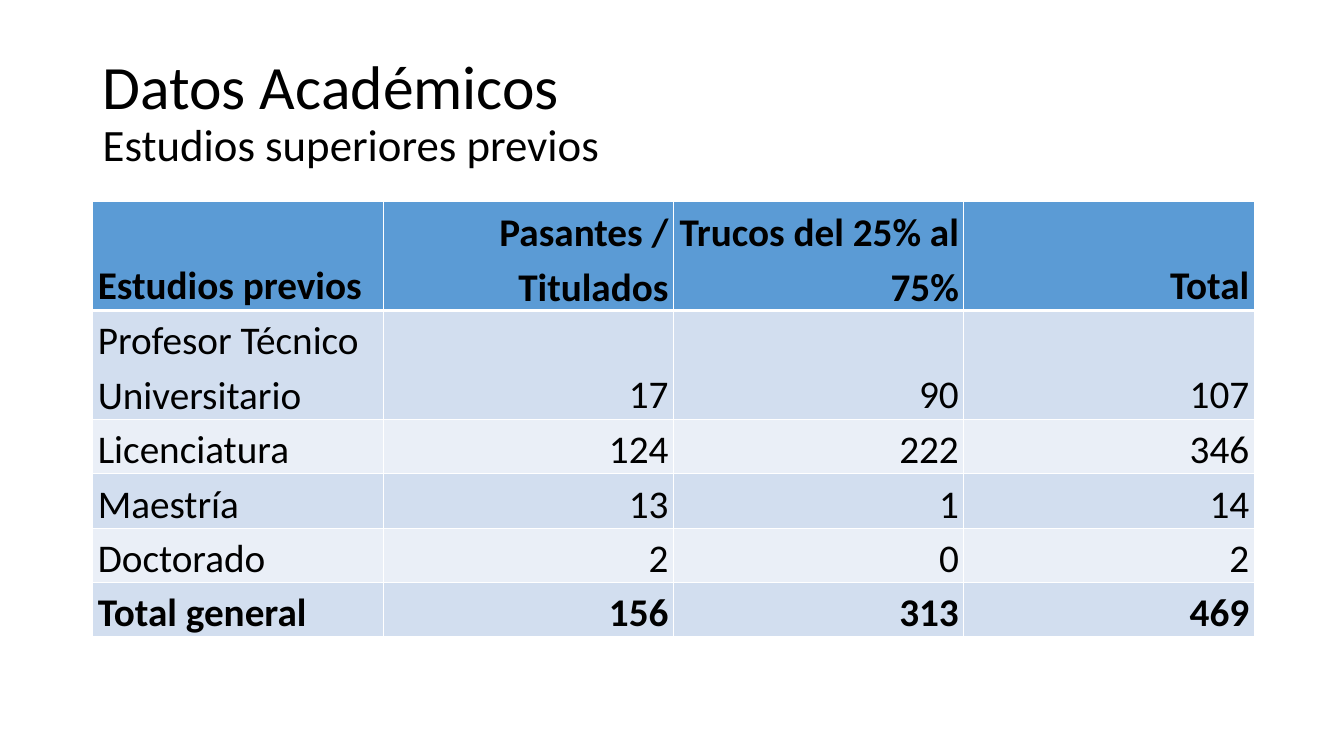
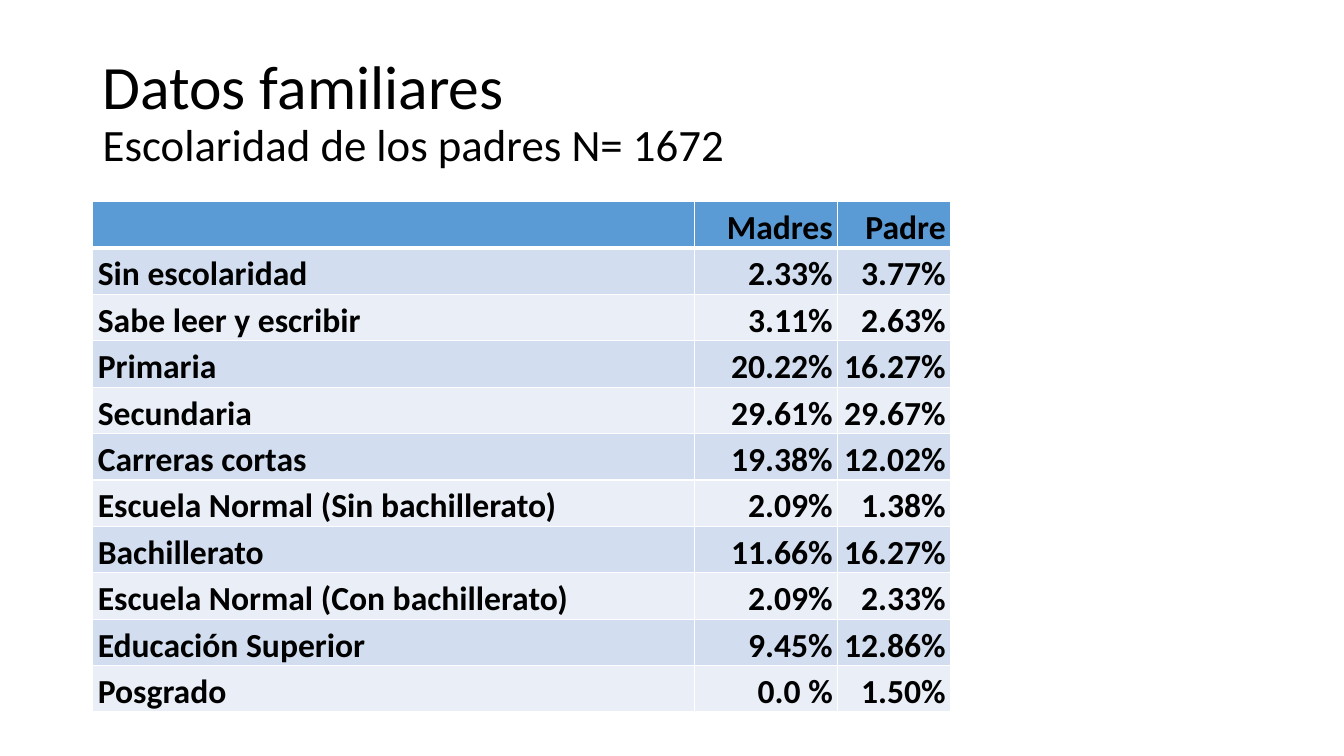
from dataclasses import dataclass

from lxml.etree import SubElement
from pptx import Presentation
from pptx.dml.color import RGBColor
from pptx.enum.text import MSO_ANCHOR as Anchor, PP_ALIGN as Align
from pptx.oxml.ns import qn
from pptx.util import Inches, Pt


@dataclass(frozen=True)
class Theme:
    font: str = "Calibri"
    text: str = "000000"
    border: str = "FFFFFF"
    header: str = "5B9BD5"
    bands: tuple = ("D2DEEF", "EAEFF7")
    title_size: int = 44
    subtitle_size: int = 32
    thin: int = 1
    thick: int = 3


theme = Theme()


def format_runs(paragraph, sizes, bold=False):
    for run, size in zip(paragraph.runs, sizes):
        run.font.name = theme.font
        run.font.size = Pt(size)
        run.font.bold = bold
        run.font.color.rgb = RGBColor.from_string(theme.text)


def add_border(cell, side, width):
    line = SubElement(cell._tc.get_or_add_tcPr(), qn(f"a:ln{side}"), w=str(Pt(width)))
    fill = SubElement(line, qn("a:solidFill"))
    SubElement(fill, qn("a:srgbClr"), val=theme.border)


slides = [
    {
        "title": "Datos Académicos",
        "subtitle": "Estudios superiores previos",
        "size": 28,
        "columns": [2.88] * 4,
        "line_height": 0.54,
        "two_line_rows": {0, 1},
        "bold_rows": {0, 5},
        "rows": [
            ("Estudios previos", "Pasantes / Titulados", "Trucos del 25% al 75%", "Total"),
            ("Profesor Técnico Universitario", "17", "90", "107"),
            ("Licenciatura", "124", "222", "346"),
            ("Maestría", "13", "1", "14"),
            ("Doctorado", "2", "0", "2"),
            ("Total general", "156", "313", "469"),
        ],
    },
    {
        "title": "Datos familiares",
        "subtitle": "Escolaridad de los padres N= 1672",
        "size": 24,
        "columns": [5.97, 1.42, 1.12],
        "line_height": 0.46,
        "two_line_rows": set(),
        "bold_rows": set(range(11)),
        "rows": [
            ("", "Madres", "Padre"),
            ("Sin escolaridad", "2.33%", "3.77%"),
            ("Sabe leer y escribir", "3.11%", "2.63%"),
            ("Primaria", "20.22%", "16.27%"),
            ("Secundaria", "29.61%", "29.67%"),
            ("Carreras cortas", "19.38%", "12.02%"),
            ("Escuela Normal (Sin bachillerato)", "2.09%", "1.38%"),
            ("Bachillerato", "11.66%", "16.27%"),
            ("Escuela Normal (Con bachillerato)", "2.09%", "2.33%"),
            ("Educación Superior", "9.45%", "12.86%"),
            ("Posgrado", "0.0 %", "1.50%"),
        ],
    },
]

presentation = Presentation()
presentation.slide_width = Inches(13.33)
presentation.slide_height = Inches(7.5)
left = Inches(0.92)

for content in slides:
    slide = presentation.slides.add_slide(presentation.slide_layouts[6])

    title = slide.shapes.add_textbox(left, Inches(0.4), Inches(11.5), Inches(1.45))
    title.text_frame.word_wrap = True
    title.text_frame.vertical_anchor = Anchor.MIDDLE
    paragraph = title.text_frame.paragraphs[0]
    paragraph.text = f"{content['title']}\v{content['subtitle']}"
    paragraph.line_spacing = 0.9
    format_runs(paragraph, (theme.title_size, theme.subtitle_size))

    rows, columns = content["rows"], content["columns"]
    heights = [
        content["line_height"] * (2 if index in content["two_line_rows"] else 1)
        for index in range(len(rows))
    ]
    table = slide.shapes.add_table(
        len(rows), len(columns), left, Inches(2), Inches(sum(columns)), Inches(sum(heights))
    ).table
    table.first_row = False
    table.horz_banding = False
    for column, width in zip(table.columns, columns):
        column.width = Inches(width)

    for row_index, (values, height) in enumerate(zip(rows, heights)):
        table.rows[row_index].height = Inches(height)
        color = theme.bands[(row_index - 1) % 2] if row_index else theme.header
        borders = {
            "L": theme.thin,
            "R": theme.thin,
            "T": theme.thick if row_index == 1 else theme.thin,
            "B": theme.thick if row_index == 0 else theme.thin,
        }
        for column_index, value in enumerate(values):
            cell = table.cell(row_index, column_index)
            for side, width in borders.items():
                add_border(cell, side, width)
            cell.fill.solid()
            cell.fill.fore_color.rgb = RGBColor.from_string(color)
            cell.vertical_anchor = Anchor.BOTTOM
            cell.margin_left = cell.margin_right = Inches(0.05)
            cell.margin_top = cell.margin_bottom = 0
            paragraph = cell.text_frame.paragraphs[0]
            paragraph.text = value
            paragraph.alignment = Align.RIGHT if column_index else Align.LEFT
            paragraph.line_spacing = 1.15
            format_runs(paragraph, (content["size"],), row_index in content["bold_rows"])

presentation.save("out.pptx")
